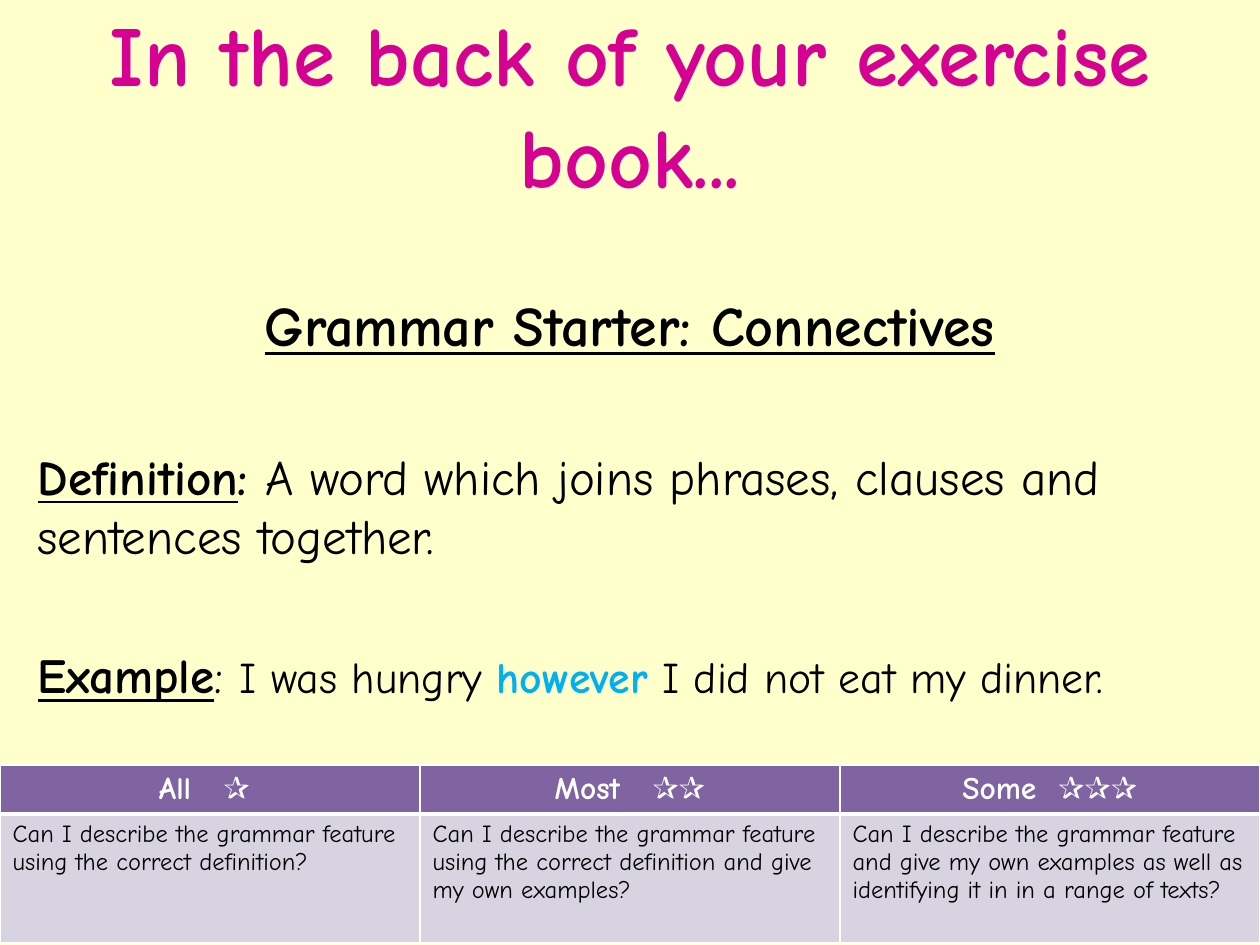
from lxml import etree
from pptx import Presentation, util as u
from pptx.dml.color import RGBColor
from pptx.enum import text
from pptx.oxml.ns import qn

PX = 914400 // 126
FONT = "Comic Neue"
CREAM = RGBColor(0xFF, 0xFF, 0xCC)
PINK = RGBColor(0xD6, 0x00, 0x93)
BLACK = RGBColor(0, 0, 0)
WHITE = RGBColor(255, 255, 255)
BLUE = RGBColor(0x00, 0xB0, 0xF0)
PURPLE = RGBColor(0x80, 0x64, 0xA2)
LILAC = RGBColor(0xD8, 0xD3, 0xE0)
CENTER, LEFT = text.PP_ALIGN.CENTER, text.PP_ALIGN.LEFT


def add_run(p, words, size, color=BLACK, bold=False, underline=False):
    r = p.add_run()
    r.text = words
    r.font.color.rgb = color
    style = {"name": FONT, "size": u.Pt(size), "bold": bold, "underline": underline}
    for key, value in style.items():
        setattr(r.font, key, value)
    return r


def add_border(cell, side, points):
    ln = etree.SubElement(cell._tc.get_or_add_tcPr(), qn(f"a:ln{side}"), w=str(u.Pt(points)))
    fill = etree.SubElement(ln, qn("a:solidFill"))
    etree.SubElement(fill, qn("a:srgbClr"), val=str(WHITE))


prs = Presentation()
prs.slide_width, prs.slide_height = 1260 * PX, 945 * PX
s = prs.slides.add_slide(prs.slide_layouts[1])
s.background.fill.solid()
s.background.fill.fore_color.rgb = CREAM

title, body = s.placeholders
for sp, box in ((title, (0, 2, 1260, 203)), (body, (25, 284, 1210, 610))):
    for key, value in zip(("left", "top", "width", "height"), box):
        setattr(sp, key, value * PX)
    sp.text_frame.auto_size = text.MSO_AUTO_SIZE.NONE
    sp.text_frame.word_wrap = True

p = title.text_frame.paragraphs[0]
p.alignment = CENTER
add_run(p, "In the back of your exercise book...", 48.6, PINK, True)

paragraphs = [
    (CENTER, 3, [("Grammar Starter: Connectives", 32, BLACK, True, True)]),
    (LEFT, 51, [
        ("Definition", 28, BLACK, True, True),
        (": ", 28, BLACK, True),
        ("A word which joins phrases, clauses and sentences together.", 28),
    ]),
    (LEFT, 46, [
        ("Example", 28, BLACK, True, True),
        (": ", 28),
        ("I was hungry ", 25),
        ("however", 25, BLUE, True),
        (" I did not eat my dinner.", 25),
    ]),
]
tf = body.text_frame
for i, (align, before, runs) in enumerate(paragraphs):
    p = tf.add_paragraph() if i else tf.paragraphs[0]
    p.alignment = align
    p.space_before = u.Pt(before)
    pPr = p._p.get_or_add_pPr()
    pPr.set("marL", "0")
    pPr.set("indent", "0")
    etree.SubElement(pPr, qn("a:buNone"))
    for run in runs:
        add_run(p, *run)

levels = [
    ("All", "✰ ", 12, "Can I describe the grammar feature using the correct definition?"),
    ("Most", "✰✰", 12, "Can I describe the grammar feature using the correct definition and give my own examples?"),
    ("Some", "✰✰✰", 6, "Can I describe the grammar feature and give my own examples as well as identifying it in in a range of texts?"),
]
table = s.shapes.add_table(2, 3, 0, 765 * PX, 1260 * PX, 177 * PX).table
table.rows[0].height, table.rows[1].height = 48 * PX, 129 * PX
for col, (name, stars, gap, goal) in enumerate(levels):
    table.columns[col].width = 420 * PX
    head, cell = table.cell(0, col), table.cell(1, col)
    p = head.text_frame.paragraphs[0]
    p.alignment = CENTER
    add_run(p, name, 18, WHITE, True)
    space = add_run(p, " ", 18, WHITE, True)
    space.font._element.set("spc", str(gap * 100))
    add_run(p, stars, 18, WHITE, True)
    add_run(cell.text_frame.paragraphs[0], goal, 14)
    for c, color, widths in ((head, PURPLE, (1, 1, 1, 3)), (cell, LILAC, (1, 1, 3, 1))):
        if c is cell:
            widths = (1, 1, 3, 1)
        for side, points in zip("LRTB", widths):
            add_border(c, side, points)
        c.fill.solid()
        c.fill.fore_color.rgb = color

prs.save("out.pptx")
